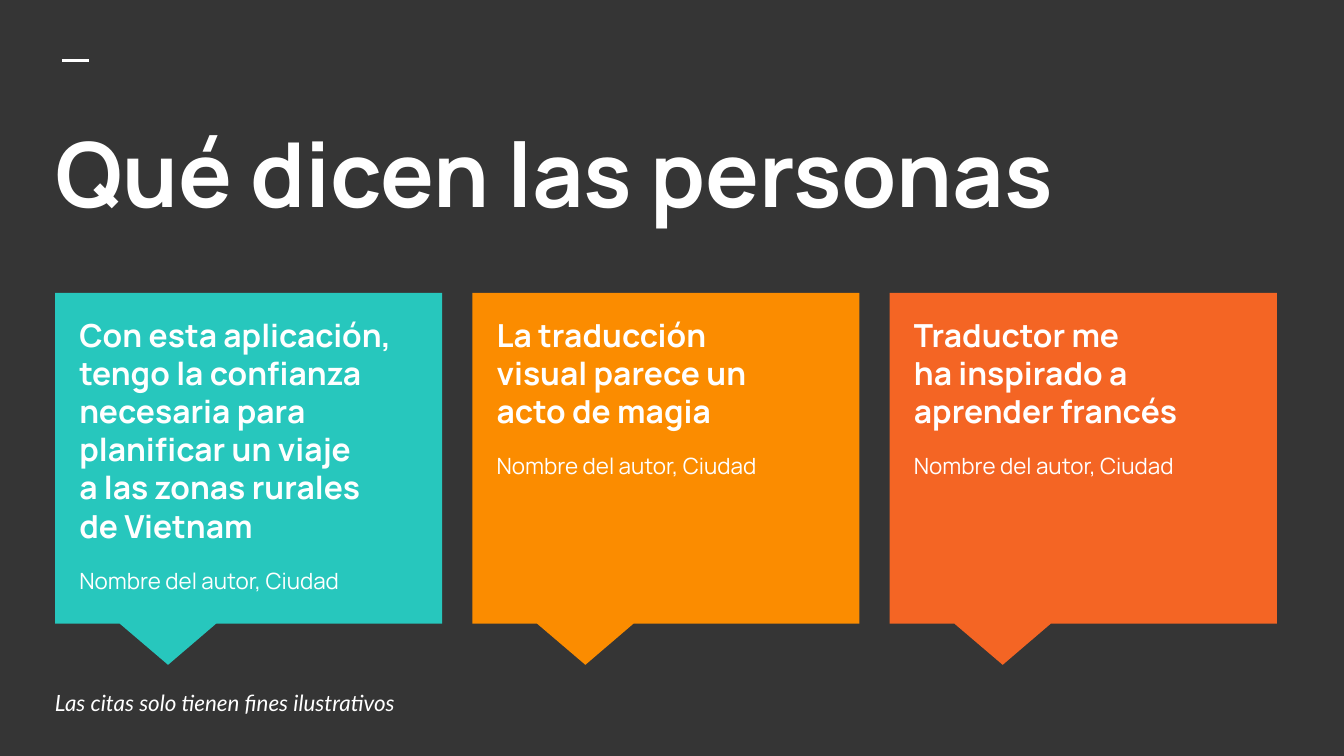
from dataclasses import dataclass

import pptx
import pptx.dml.color
import pptx.enum.shapes
import pptx.enum.text
import pptx.oxml
import pptx.oxml.ns
import pptx.util

Inches = pptx.util.Inches
Pt = pptx.util.Pt
RGB = pptx.dml.color.RGBColor.from_string
ANCHOR = pptx.enum.text.MSO_ANCHOR


@dataclass(frozen=True)
class Theme:
    background = RGB("353535")
    text = RGB("FFFFFF")
    cards = (RGB("27C7BD"), RGB("FB8C00"), RGB("F46524"))
    title = {"name": "Manrope", "size": Pt(48), "bold": True, "italic": False}
    quote = {"name": "Manrope", "size": Pt(17), "bold": True, "italic": False}
    author = {"name": "Manrope", "size": Pt(12), "bold": False, "italic": False}
    note = {"name": "Lato", "size": Pt(12), "bold": False, "italic": True}


THEME = Theme()

QUOTES = (
    "Con esta aplicación, tengo la confianza necesaria para planificar un viaje "
    "\va las zonas rurales \vde Vietnam",
    "La traducción \vvisual parece un \vacto de magia",
    "Traductor me \vha inspirado a aprender francés",
)
AUTHOR = "Nombre del autor, Ciudad"


def set_values(target, values):
    for name, value in values.items():
        setattr(target, name, value)


def place(shape, left, top, width, height):
    set_values(shape, {"left": Inches(left), "top": Inches(top),
                       "width": Inches(width), "height": Inches(height)})


def prepare_frame(shape, anchor=ANCHOR.TOP):
    frame = shape.text_frame
    sides = ("left", "top", "right", "bottom")
    set_values(frame, {f"margin_{side}": Inches(0.1) for side in sides})
    set_values(frame, {"word_wrap": True, "vertical_anchor": anchor,
                       "auto_size": pptx.enum.text.MSO_AUTO_SIZE.NONE})
    return frame


def write(paragraph, text, style, before=0, after=0):
    """Fill a paragraph with unbulleted, left-aligned text."""
    properties = paragraph._p.get_or_add_pPr()
    properties.set("marL", "0")
    properties.set("indent", "0")
    properties.append(pptx.oxml.parse_xml(
        f'<a:buNone {pptx.oxml.ns.nsdecls("a")}/>'))
    set_values(paragraph, {"text": text, "alignment": pptx.enum.text.PP_ALIGN.LEFT,
                           "space_before": Pt(before), "space_after": Pt(after)})
    for run in paragraph.runs:
        set_values(run.font, style)
        run.font.color.rgb = THEME.text


def add_heading(slide, left, top, width, height):
    """Place the title and the short dash above it."""
    dash_left, dash_top = left + 0.15, top - 0.33
    dash = slide.shapes.add_connector(
        pptx.enum.shapes.MSO_CONNECTOR.STRAIGHT, Inches(dash_left), Inches(dash_top),
        Inches(dash_left + 0.2), Inches(dash_top))
    dash.line.color.rgb = THEME.text
    dash.line.width = Pt(1.5)
    dash.element.spPr.append(pptx.oxml.parse_xml(
        f'<a:effectLst {pptx.oxml.ns.nsdecls("a")}/>'))

    title = slide.shapes.title
    place(title, left, top, width, height)
    write(prepare_frame(title).paragraphs[0], "Qué dicen las personas", THEME.title)


def add_quote_card(slide, body, quote, color, left, top, width, height):
    """Place a speech bubble with the body placeholder on top of it."""
    bubble = slide.shapes.add_shape(
        pptx.enum.shapes.MSO_SHAPE.RECTANGULAR_CALLOUT,
        Inches(left), Inches(top), Inches(width), Inches(height))
    bubble.adjustments[0], bubble.adjustments[1] = -0.208, 0.625
    bubble.fill.solid()
    bubble.fill.fore_color.rgb = color
    bubble.line.fill.background()
    bubble.shadow.inherit = False

    bubble.element.addnext(body.element)
    place(body, left + 0.08, top + 0.07, width - 0.17, height - 0.27)
    frame = prepare_frame(body)
    write(frame.paragraphs[0], quote, THEME.quote)
    write(frame.add_paragraph(), AUTHOR, THEME.author, before=12, after=12)


def add_quote_row(slide, bodies, left, top, width, height):
    card_width = 2.88
    step = (width - card_width) / (len(QUOTES) - 1)
    for i, (body, quote, color) in enumerate(zip(bodies, QUOTES, THEME.cards)):
        add_quote_card(slide, body, quote, color,
                       left + i * step, top, card_width, height)


def add_note(slide, left, top, width, height):
    note = slide.shapes.add_textbox(
        Inches(left), Inches(top), Inches(width), Inches(height))
    frame = prepare_frame(note, ANCHOR.MIDDLE)
    write(frame.paragraphs[0], "Las citas solo tienen fines ilustrativos", THEME.note)


def main():
    deck = pptx.Presentation()
    deck.slide_width, deck.slide_height = Inches(10), Inches(10 * 9 / 16)
    comparison_layout = deck.slide_layouts[4]
    slide = deck.slides.add_slide(comparison_layout)
    slide.background.fill.solid()
    slide.background.fill.fore_color.rgb = THEME.background

    *bodies, spare = list(slide.placeholders)[1:]
    spare.element.getparent().remove(spare.element)

    add_heading(slide, 0.31, 0.78, 9.43, 1.12)
    add_quote_row(slide, bodies, 0.41, 2.18, 9.09, 2.46)
    add_note(slide, 0.31, 5.09, 6.83, 0.28)
    deck.save("out.pptx")


if __name__ == "__main__":
    main()
